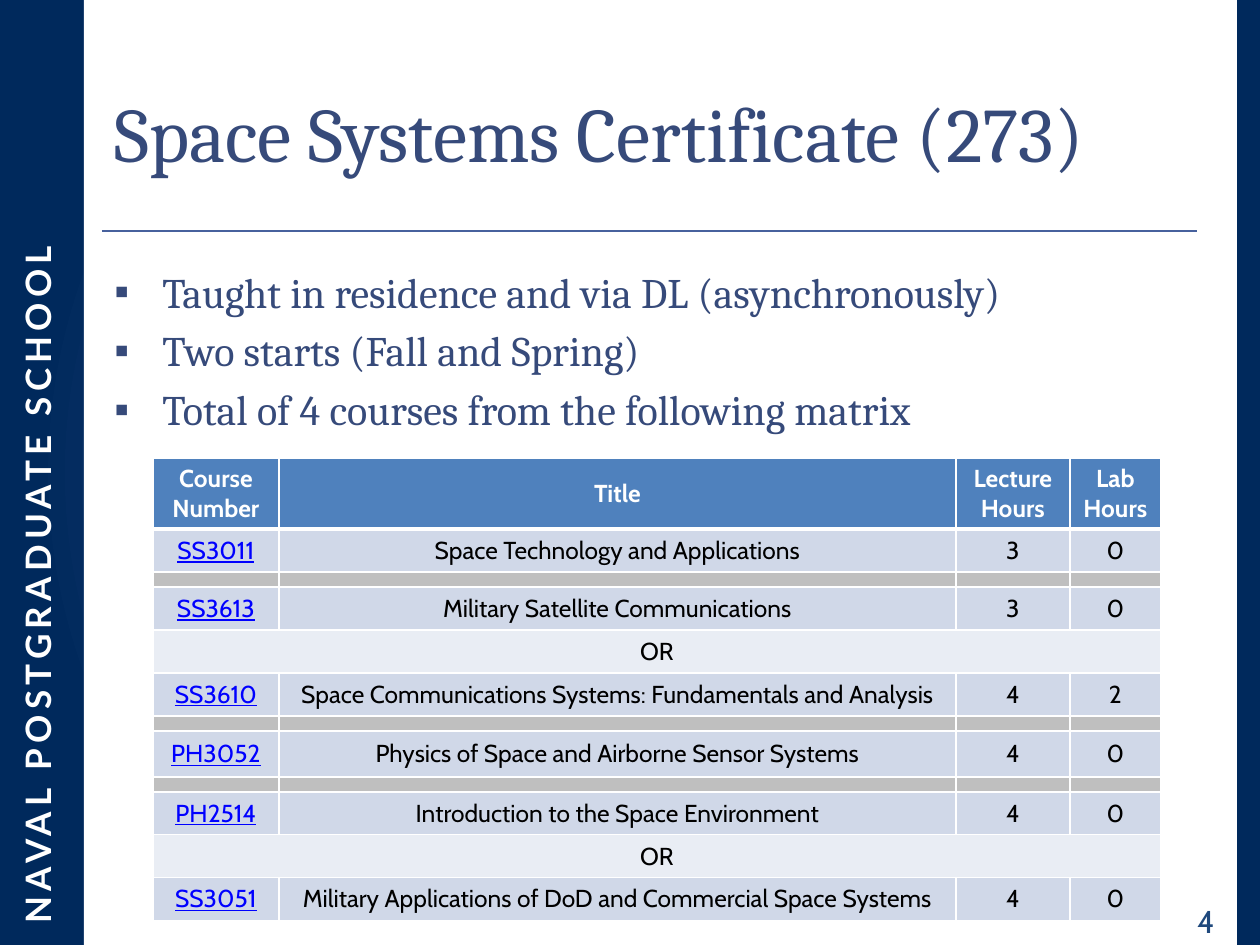
import pptx
import pptx.dml.color
import pptx.enum.shapes
import pptx.enum.text
import pptx.oxml
import pptx.oxml.ns
import pptx.util
from lxml import etree

# Content
SCHOOL = "NAVAL POSTGRADUATE SCHOOL"
TITLE = "Space Systems Certificate (273)"
PAGE_NUMBER = "4"
BULLETS = [
    "Taught in residence and via DL (asynchronously)",
    "Two starts (Fall and Spring)",
    "Total of 4 courses from the following matrix",
]
HEADINGS = ("Course Number", "Title", "Lecture Hours", "Lab Hours")
GAP, OR = (), ("OR",)
COURSES = [
    ("SS3011", "Space Technology and Applications", "3", "0"),
    GAP,
    ("SS3613", "Military Satellite Communications", "3", "0"),
    OR,
    ("SS3610", "Space Communications Systems: Fundamentals and Analysis", "4", "2"),
    GAP,
    ("PH3052", "Physics of Space and Airborne Sensor Systems", "4", "0"),
    GAP,
    ("PH2514", "Introduction to the Space Environment", "4", "0"),
    OR,
    ("SS3051", "Military Applications of DoD and Commercial Space Systems", "4", "0"),
]

# Layout in px, 126 to the inch
COLUMNS = (126, 677, 114, 91)
HEADER_HEIGHT, COURSE_HEIGHT, GAP_HEIGHT = 71, 43, 15
TALL_ROWS = {"PH3052": 46}

INK, NAVY, BLUE, WHITE = "364A7A", "00295C", "47619D", "FFFFFF"
ALIGN = pptx.enum.text.PP_ALIGN
MIDDLE = pptx.enum.text.MSO_ANCHOR.MIDDLE
qn = pptx.oxml.ns.qn


def px(length):
    return pptx.util.Emu(length * 7257)


def rgb(code):
    return pptx.dml.color.RGBColor.from_string(code)


def style(para, name, size, color, bold=False, align=ALIGN.LEFT):
    para.alignment = align
    font = para.font
    font.name, font.size, font.bold = name, pptx.util.Pt(size), bold
    font.color.rgb = rgb(color)


def add_text_box(page, left, top, width, height):
    box = page.shapes.add_textbox(px(left), px(top), px(width), px(height))
    box.text_frame.word_wrap = True
    return box


def add_bullet(para, indent):
    props = para._p.get_or_add_pPr()
    props.set("marL", str(indent))
    props.set("indent", str(-indent))
    etree.SubElement(props, qn("a:buFont"), typeface="Arial")
    etree.SubElement(props, qn("a:buChar"), char="▪")


def add_borders(cell, bottom):
    props = cell._tc.get_or_add_tcPr()
    for index, (side, points) in enumerate(
            (("L", 1), ("R", 1), ("T", 1), ("B", bottom))):
        line = etree.Element(qn("a:ln" + side), w=str(pptx.util.Pt(points)))
        fill = etree.SubElement(line, qn("a:solidFill"))
        etree.SubElement(fill, qn("a:srgbClr"), val=WHITE)
        props.insert(index, line)


def format_cell(cell, fill, bottom=1):
    cell.fill.solid()
    cell.fill.fore_color.rgb = rgb(fill)
    cell.vertical_anchor = MIDDLE
    cell.margin_left = cell.margin_right = px(6)
    cell.margin_top = cell.margin_bottom = px(6)
    add_borders(cell, bottom)


def write_cell(cell, text, color, bold=False):
    para = cell.text_frame.paragraphs[0]
    para.text = text
    style(para, "Cabin", 14, color, bold, ALIGN.CENTER)


def shrink_empty_cell(cell):
    cell.margin_top = cell.margin_bottom = 0
    para = cell.text_frame.paragraphs[0]
    etree.SubElement(para._p, qn("a:endParaRPr"), sz="100")


def row_height(row):
    return TALL_ROWS.get(row[0], COURSE_HEIGHT) if row else GAP_HEIGHT


def add_course_table(page):
    heights = [HEADER_HEIGHT] + [row_height(row) for row in COURSES]
    frame = page.shapes.add_table(
        len(heights), len(COLUMNS), px(153), px(458),
        px(sum(COLUMNS)), px(sum(heights)))
    table = frame.table
    for column, width in zip(table.columns, COLUMNS):
        column.width = px(width)
    for table_row, height in zip(table.rows, heights):
        table_row.height = px(height)

    for cell, heading in zip(table.rows[0].cells, HEADINGS):
        format_cell(cell, "4F81BD", bottom=3)
        write_cell(cell, heading, WHITE, bold=True)

    for number, row in enumerate(COURSES, 1):
        cells = list(table.rows[number].cells)
        fill = {GAP: "BFBFBF", OR: "E9EDF4"}.get(row, "D0D8E8")
        for cell in cells:
            format_cell(cell, fill)
            if row == GAP:
                shrink_empty_cell(cell)
        if row == OR:
            cells[0].merge(cells[-1])
        for cell, text in zip(cells, row):
            write_cell(cell, text, "000000")
        if row not in (GAP, OR):
            code_font = cells[0].text_frame.paragraphs[0].runs[0].font
            code_font.color.rgb = rgb("0000FF")
            code_font.underline = True


def main():
    deck = pptx.Presentation()
    deck.slide_width, deck.slide_height = px(1260), px(945)
    page = deck.slides.add_slide(deck.slide_layouts[6])

    # Radial background
    background = page.background.fill
    background.gradient()
    for stop, color, position in zip(
            background.gradient_stops, (BLUE, NAVY), (0, 0.76)):
        stop.color.rgb = rgb(color)
        stop.position = position
    gradient = next(page._element.iter(qn("a:gradFill")))
    gradient.remove(gradient.find(qn("a:lin")))
    radial = etree.SubElement(gradient, qn("a:path"), path="circle")
    etree.SubElement(radial, qn("a:fillToRect"),
                     l="50000", t="50000", r="50000", b="50000")

    # White panel
    panel = page.shapes.add_shape(
        pptx.enum.shapes.MSO_SHAPE.RECTANGLE, px(84), 0, px(1153), px(945))
    panel.shadow.inherit = False
    panel.fill.solid()
    panel.fill.fore_color.rgb = rgb(WHITE)
    panel.line.fill.background()

    # School name up the left side
    school = add_text_box(page, -398, 473, 871, 55)
    school.rotation = 270
    para = school.text_frame.paragraphs[0]
    span = para.add_run()
    span.text = SCHOOL
    span._r.get_or_add_rPr().set("spc", "300")
    style(para, "Lato", 20, WHITE, True, ALIGN.JUSTIFY)

    # Rule under the title
    rule = page.shapes.add_connector(
        pptx.enum.shapes.MSO_CONNECTOR.STRAIGHT,
        px(102), px(231), px(1197), px(231))
    rule.line.color.rgb = rgb(BLUE)
    rule.line.width = pptx.util.Pt(1.5)
    etree.SubElement(rule._element.spPr, qn("a:effectLst"))

    # Page number
    number = add_text_box(page, 1168, 896, 59, 50)
    para = number.text_frame.paragraphs[0]
    para.text = PAGE_NUMBER
    style(para, "Cabin", 18, "1F497D", align=ALIGN.RIGHT)

    # Title
    title = add_text_box(page, 102, 76, 1095, 129)
    title.text_frame.vertical_anchor = MIDDLE
    para = title.text_frame.paragraphs[0]
    para.text = TITLE
    para.line_spacing = 0.8
    style(para, "Cambria", 44, INK)

    # Bullets
    body = add_text_box(page, 102, 260, 1095, 654).text_frame
    for index, text in enumerate(BULLETS):
        para = body.add_paragraph() if index else body.paragraphs[0]
        para.text = text
        if index:
            para.space_before = pptx.util.Pt(4.8)
        add_bullet(para, px(48))
        style(para, "Cambria", 24, INK)

    add_course_table(page)
    deck.save("out.pptx")


if __name__ == "__main__":
    main()
